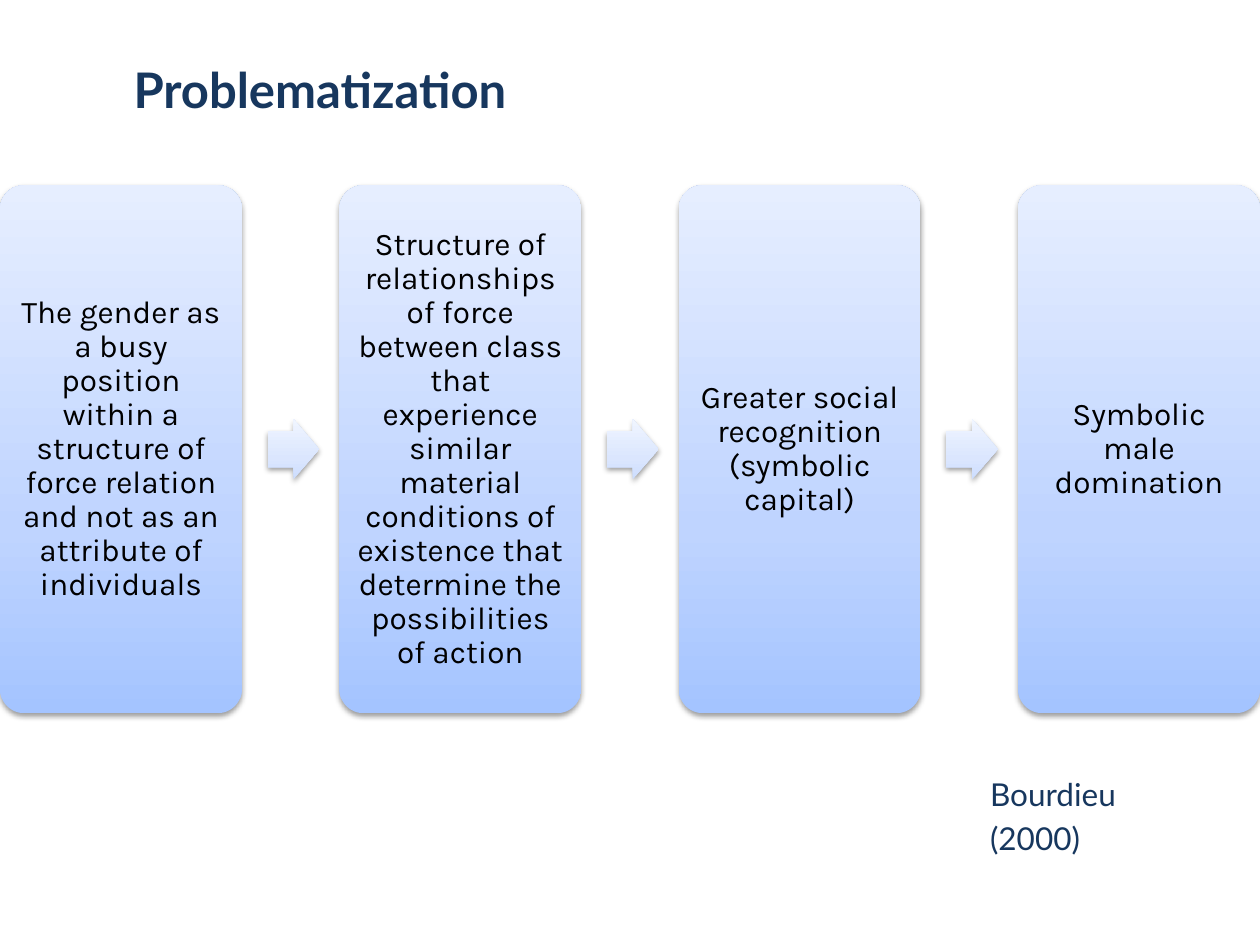
from lxml.etree import SubElement as Sub
from pptx import Presentation
from pptx.dml.color import RGBColor as Rgb
from pptx.enum.shapes import MSO_SHAPE as Kind
from pptx.enum.text import MSO_ANCHOR as Anchor, MSO_AUTO_SIZE as Auto, PP_ALIGN as Align
from pptx.oxml.ns import qn
from pptx.util import Inches, Pt

COLORS = {"navy": "17375E", "ink": "000000", "shade": "000000"}
CARD = {0: "A4C4FF", 35: "BFD4FF", 100: "E6EEFF"}
ARROW = {0: "CDDDFE", 35: "DBE6FE", 100: "F0F5FF"}

HEAD = {"name": "Lato", "size": Pt(28), "bold": True}
CITE = {"name": "Lato", "size": Pt(18), "bold": False}
BODY = {"name": "Karla", "size": Pt(18), "bold": False}

STEPS = [
    "The gender as a busy position within a structure of force relation "
    "and not as an attribute of individuals",
    "Structure of relationships of force between class that experience similar "
    "material conditions of existence that determine the possibilities of action",
    "Greater social recognition (symbolic capital)",
    "Symbolic male domination",
]


def apply(item, values):
    for key, value in values.items():
        setattr(item, key, value)


class Deck:
    """Holds the style and the current slide; lengths are grid columns and rows."""

    COLS, ROWS = 100, 75

    def __init__(self):
        self.prs = Presentation()
        self.prs.slide_width, self.prs.slide_height = Inches(10), Inches(7.5)
        self.col = self.prs.slide_width / self.COLS
        self.row = self.prs.slide_height / self.ROWS
        self.slide = self.prs.slides.add_slide(self.prs.slide_layouts[5])

    def area(self, x, y, w, h):
        return (round(x * self.col), round(y * self.row),
                round(w * self.col), round(h * self.row))

    def label(self, shape, text, font, color, frame, para):
        box = shape.text_frame
        box.text = text
        apply(box, {"word_wrap": True, "auto_size": Auto.NONE, **frame})
        line = box.paragraphs[0]
        apply(line, {"space_before": Pt(0), **para})
        apply(line.runs[0].font, font)
        line.runs[0].font.color.rgb = Rgb.from_string(COLORS[color])

    def title(self, text, *grid):
        shape = self.slide.shapes.title
        apply(shape, dict(zip(("left", "top", "width", "height"), self.area(*grid))))
        self.label(shape, text, HEAD, "navy", {"vertical_anchor": Anchor.TOP},
                   {"alignment": Align.LEFT, "line_spacing": 1.15})

    def note(self, text, *grid):
        shape = self.slide.shapes.add_textbox(*self.area(*grid))
        self.label(shape, text, CITE, "navy", {"vertical_anchor": Anchor.TOP},
                   {"alignment": Align.LEFT, "line_spacing": 1.15})

    def block(self, kind, stops, bends, *grid):
        shape = self.slide.shapes.add_shape(kind, *self.area(*grid))
        for i, bend in enumerate(bends):
            shape.adjustments[i] = bend
        shape.line.fill.background()
        self.blend(shape, stops)
        self.shade(shape)
        return shape

    def blend(self, shape, stops):
        shape.fill.gradient()
        shape.fill.gradient_angle = 90
        marks = shape._element.spPr.find(".//" + qn("a:gsLst"))
        for mark in list(marks):
            marks.remove(mark)
        for pos, color in stops.items():
            mark = Sub(marks, qn("a:gs"), pos=str(pos * 1000))
            Sub(mark, qn("a:srgbClr"), val=color)

    def shade(self, shape):
        shape.shadow.inherit = False
        effects = shape._element.spPr.find(qn("a:effectLst"))
        outer = Sub(effects, qn("a:outerShdw"), blurRad="40000", dist="20000",
                    dir="5400000", rotWithShape="0")
        color = Sub(outer, qn("a:srgbClr"), val=COLORS["shade"])
        Sub(color, qn("a:alpha"), val="38000")

    def card(self, text, *grid):
        shape = self.block(Kind.ROUNDED_RECTANGLE, CARD, [0.1], *grid)
        sides = ("margin_left", "margin_top", "margin_right", "margin_bottom")
        frame = dict.fromkeys(sides, Inches(0.07))
        self.label(shape, text, BODY, "ink", {"vertical_anchor": Anchor.MIDDLE, **frame},
                   {"alignment": Align.CENTER, "line_spacing": 0.9})

    def arrow(self, *grid):
        self.block(Kind.RIGHT_ARROW, ARROW, [0.6, 0.5], *grid)


def main():
    deck = Deck()
    deck.title("Problematization", 9.6, 3.5, 34, 6)

    # Chain of cards with an arrow in each gap
    wide, tall, top = 19.2, 41.9, 14.7
    step = (deck.COLS - wide) / (len(STEPS) - 1)
    for i, text in enumerate(STEPS):
        left = i * step
        if i:
            deck.arrow(left - 5.7, top + (tall - 4.8) / 2, 4.1, 4.8)
        deck.card(text, left, top, wide, tall)

    # Source of the idea
    deck.note("Bourdieu (2000)", 77.6, 60.6, 15, 8)
    deck.prs.save("out.pptx")


if __name__ == "__main__":
    main()
